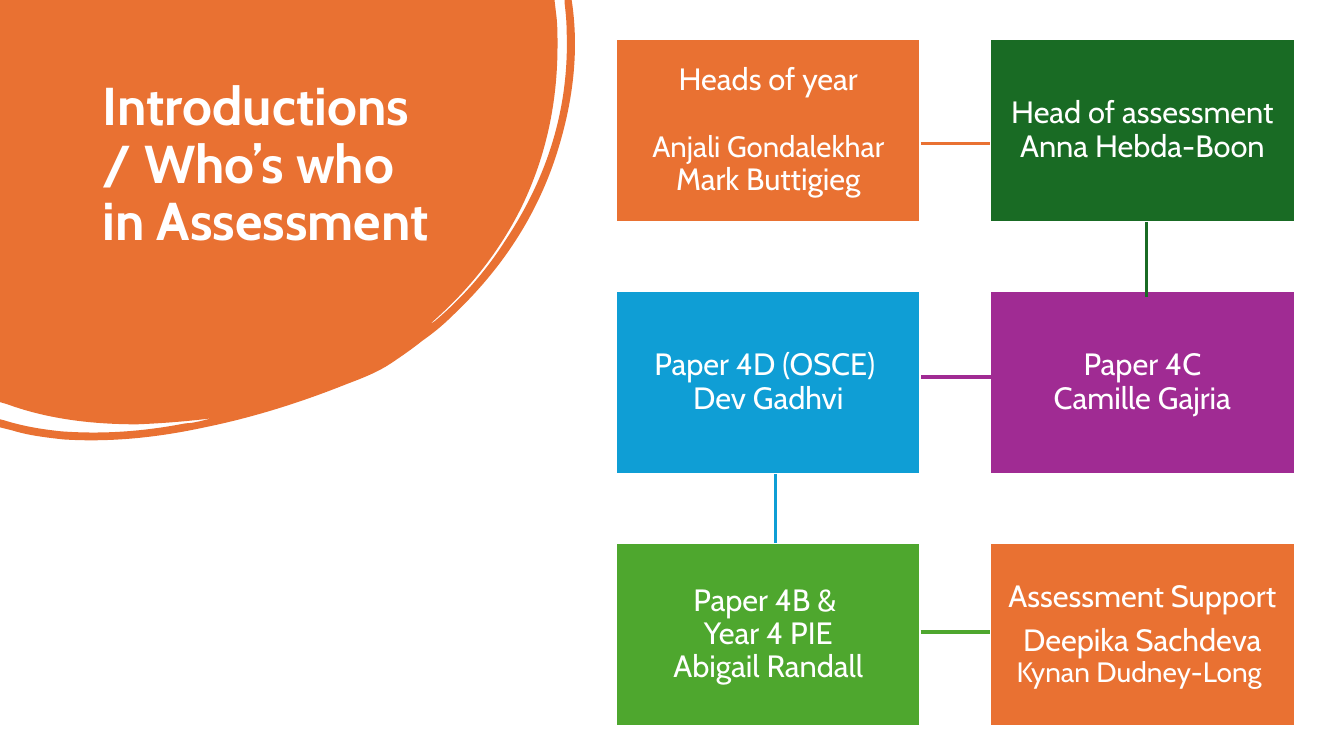
import pptx
import pptx.util
import pptx.dml.color
import pptx.enum.shapes
import pptx.enum.text
import pptx.oxml.ns
import lxml.etree

PX = 9144  # 100 px to the inch
FONT = "Cabin"
COLOURS = {
    "white": "FFFFFF",
    "orange": "E97132",
    "dark green": "196B24",
    "blue": "0F9ED5",
    "purple": "A02B93",
    "green": "4EA72E",
}


def colour(name):
    return pptx.dml.color.RGBColor.from_string(COLOURS[name])


def add_text(para, text, size, bold=False):
    span = para.add_run()
    span.text = text
    span.font.name = FONT
    span.font.size = pptx.util.Pt(size)
    span.font.bold = bold
    span.font.color.rgb = colour("white")


deck = pptx.Presentation()
deck.slide_width = 1333 * PX
deck.slide_height = 750 * PX
page = deck.slides.add_slide(deck.slide_layouts[5])

# Title
title = page.shapes.title
title.left, title.top, title.width, title.height = [n * PX for n in (92, 74, 352, 222)]
frame = title.text_frame
frame.word_wrap = True
frame.auto_size = pptx.enum.text.MSO_AUTO_SIZE.NONE
frame.vertical_anchor = pptx.enum.text.MSO_ANCHOR.TOP
para = frame.paragraphs[0]
para.alignment = pptx.enum.text.PP_ALIGN.LEFT
para.line_spacing = 0.9
add_text(para, "Introductions/ Who’s who in Assessment", 38, bold=True)

# Brush-stroke blob: two numbers make a line, six make a Bezier curve
blob_outline = [
    (550, 0), (552, 17),
    (553, 26, 553, 36, 553, 45), (553, 101, 542, 154, 518, 204),
    (496, 249, 465, 288, 427, 321), (429, 321, 430, 319, 432, 318),
    (459, 295, 482, 269, 501, 239), (543, 176, 565, 107, 562, 30),
    (562, 21, 561, 12, 560, 3),
    (560, 0), (567, 0), (568, 7),
    (574, 54, 568, 102, 553, 150), (533, 214, 497, 268, 448, 314),
    (439, 323, 429, 331, 419, 338), (409, 346, 399, 353, 387, 361),
    (375, 369, 360, 375, 344, 381), (299, 399, 252, 414, 203, 424),
    (157, 434, 110, 439, 63, 436), (45, 434, 28, 432, 12, 427),
    (0, 424), (0, 416), (4, 417),
    (23, 423, 42, 426, 61, 428), (103, 431, 143, 428, 184, 420),
    (189, 420, 193, 419, 198, 418), (202, 417, 206, 416, 210, 415),
    (186, 418, 161, 420, 136, 421), (92, 421, 48, 416, 7, 401),
    (0, 399),
]
builder = page.shapes.build_freeform(0, 0, scale=PX)
builder.add_line_segments([(571, 0), (571, 437), (0, 437)], close=True)
blob = builder.convert_to_shape()
outline = blob._element.find(".//" + pptx.oxml.ns.qn("a:path"))
start, *sides, close = outline
for side in sides:
    outline.remove(side)
for piece in blob_outline:
    kind = "a:lnTo" if len(piece) == 2 else "a:cubicBezTo"
    segment = lxml.etree.Element(pptx.oxml.ns.qn(kind))
    for x, y in zip(piece[::2], piece[1::2]):
        lxml.etree.SubElement(segment, pptx.oxml.ns.qn("a:pt"), x=str(x), y=str(y))
    close.addprevious(segment)
blob.shadow.inherit = False
blob.fill.solid()
blob.fill.fore_color.rgb = colour("orange")
blob.line.fill.background()
title._element.addprevious(blob._element)

# Role boxes, row by row: fill, gap between paragraphs, paragraphs of (line, size)
roles = [
    ("orange", 25, [[("Heads of year", 22)],
                    [("Anjali Gondalekhar", 21), ("Mark Buttigieg", 22)]]),
    ("dark green", 0, [[("Head of assessment", 22), ("Anna Hebda-Boon", 22)]]),
    ("blue", 0, [[("Paper 4D (OSCE) ", 22), ("Dev Gadhvi", 22)]]),
    ("purple", 0, [[("Paper 4C", 22), ("Camille Gajria", 22)]]),
    ("green", 0, [[("Paper 4B & ", 22), ("Year 4 PIE", 22), ("Abigail Randall", 22)]]),
    ("orange", 8, [[("Assessment Support", 22)],
                   [("Deepika Sachdeva", 22), ("Kynan Dudney-Long ", 20)]]),
]
for index, (fill, gap, paragraphs) in enumerate(roles):
    row, column = divmod(index, 2)
    box = page.shapes.add_shape(
        pptx.enum.shapes.MSO_SHAPE.RECTANGLE,
        (611 + 371 * column) * PX, (39 + 250 * row) * PX, 302 * PX, 181 * PX)
    box.shadow.inherit = False
    box.fill.solid()
    box.fill.fore_color.rgb = colour(fill)
    box.line.color.rgb = colour("white")
    box.line.width = pptx.util.Pt(1.5)
    frame = box.text_frame
    frame.word_wrap = True
    frame.vertical_anchor = pptx.enum.text.MSO_ANCHOR.MIDDLE
    frame.margin_left = frame.margin_right = 13 * PX
    frame.margin_top = frame.margin_bottom = 14 * PX
    for number, lines in enumerate(paragraphs):
        para = frame.add_paragraph() if number else frame.paragraphs[0]
        para.alignment = pptx.enum.text.PP_ALIGN.CENTER
        para.line_spacing = 0.9
        para.space_before = pptx.util.Pt(gap if number else 0)
        for position, (text, size) in enumerate(lines):
            if position:
                para.add_line_break()
            add_text(para, text, size)

# Links between the boxes
links = [
    ("orange", 913, 142, 982, 142),
    ("dark green", 1137, 220, 1137, 295),
    ("purple", 994, 374, 913, 374),
    ("blue", 769, 470, 769, 539),
    ("green", 913, 627, 982, 627),
]
for name, *ends in links:
    link = page.shapes.add_connector(
        pptx.enum.shapes.MSO_CONNECTOR.STRAIGHT, *[n * PX for n in ends])
    link.line.color.rgb = colour(name)
    link.line.width = pptx.util.Pt(2.25)
    lxml.etree.SubElement(link._element.spPr, pptx.oxml.ns.qn("a:effectLst"))

deck.save("out.pptx")
